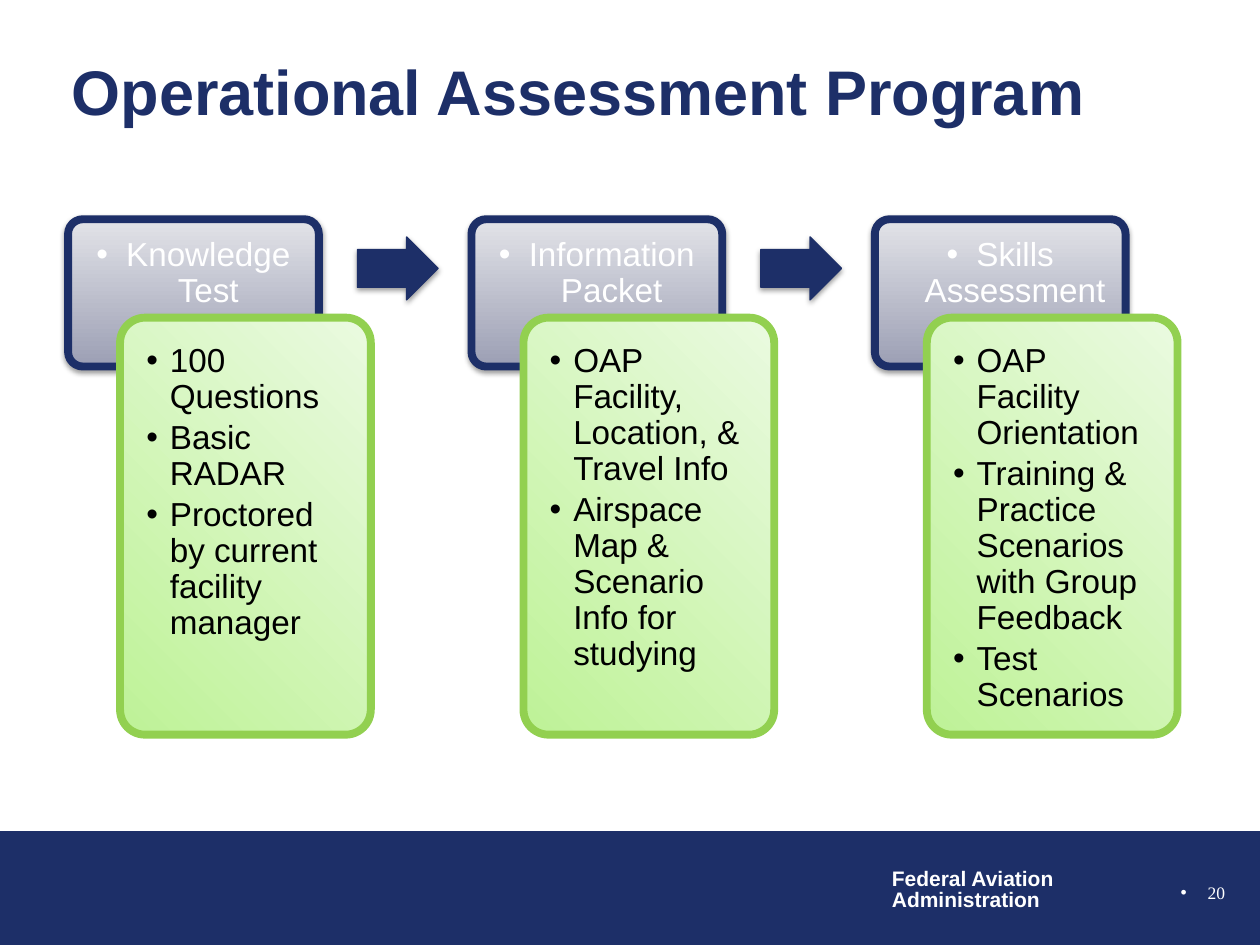
import pptx
import pptx.dml.color
import pptx.enum.shapes
import pptx.enum.text
import pptx.oxml
import pptx.oxml.ns
import pptx.util

Pt = pptx.util.Pt
RGBColor = pptx.dml.color.RGBColor
SHAPE = pptx.enum.shapes.MSO_SHAPE
ALIGN = pptx.enum.text.PP_ALIGN
AUTO_SIZE = pptx.enum.text.MSO_AUTO_SIZE
MIDDLE = pptx.enum.text.MSO_ANCHOR.MIDDLE

NAVY = RGBColor(0x1D, 0x2F, 0x68)
WHITE = RGBColor(0xFF, 0xFF, 0xFF)
BLACK = RGBColor(0x00, 0x00, 0x00)
GREEN = RGBColor(0x92, 0xD0, 0x50)
GREY_FILL = (RGBColor(0x9C, 0x9F, 0xB4), RGBColor(0xE2, 0xE3, 0xE8))
GREEN_FILL = (RGBColor(0xBE, 0xF2, 0x97), RGBColor(0xEA, 0xFA, 0xE0))

TITLE_FONT = {"name": "Arial", "size": Pt(36), "bold": True}
AGENCY_FONT = {"name": "Arial", "size": Pt(12), "bold": True}
NUMBER_FONT = {"name": "Times New Roman", "size": Pt(10)}
STEP_FONT = {"name": "Arial", "size": Pt(19)}

STEPS = [
    ("Knowledge Test",
     ["100 Questions", "Basic RADAR", "Proctored by current facility manager"]),
    ("Information Packet",
     ["OAP Facility, Location, & Travel Info",
      "Airspace Map & Scenario Info for studying"]),
    ("Skills Assessment",
     ["OAP Facility Orientation",
      "Training & Practice Scenarios with Group Feedback",
      "Test Scenarios"]),
]
STEP_PITCH = 230.5


def add_bullet(p, indent):
    """Give the paragraph a round bullet that hangs by the indent."""
    ppr = p._p.get_or_add_pPr()
    ppr.set("marL", str(Pt(indent)))
    ppr.set("indent", str(-Pt(indent)))
    ns = pptx.oxml.ns.nsdecls("a")
    ppr.append(pptx.oxml.parse_xml(f'<a:buFont {ns} typeface="Arial"/>'))
    ppr.append(pptx.oxml.parse_xml(f'<a:buChar {ns} char="•"/>'))


def fill_text(tf, lines, font, color, indent=0, **paragraph_format):
    for i, line in enumerate(lines):
        p = tf.paragraphs[0] if i == 0 else tf.add_paragraph()
        if indent:
            add_bullet(p, indent)
        for name, value in paragraph_format.items():
            setattr(p, name, value)
        r = p.add_run()
        r.text = line
        for name, value in font.items():
            setattr(r.font, name, value)
        r.font.color.rgb = color


def add_text(s, box, lines, font, color, margins=None, wrap=True, **options):
    tf = s.shapes.add_textbox(*map(Pt, box)).text_frame
    tf.word_wrap = wrap
    if margins:
        for side, value in zip(("left", "top", "right", "bottom"), margins):
            setattr(tf, f"margin_{side}", Pt(value))
    fill_text(tf, lines, font, color, **options)
    return tf


def add_panel(s, kind, box, fill, line, width, angle=0, adjustments=()):
    """Add a shape with a plain colour or a pair of gradient colours."""
    sp = s.shapes.add_shape(kind, *map(Pt, box))
    sp.shadow.inherit = False
    for i, value in enumerate(adjustments):
        sp.adjustments[i] = value
    if isinstance(fill, RGBColor):
        sp.fill.solid()
        sp.fill.fore_color.rgb = fill
    else:
        sp.fill.gradient()
        sp.fill.gradient_angle = angle
        for position, (stop, color) in enumerate(zip(sp.fill.gradient_stops, fill)):
            stop.position = position
            stop.color.rgb = color
    sp.line.color.rgb = line
    sp.line.width = Pt(width)
    return sp


def add_shadow(sp):
    effects = sp._element.spPr.find(pptx.oxml.ns.qn("a:effectLst"))
    effects.append(pptx.oxml.parse_xml(
        f'<a:outerShdw {pptx.oxml.ns.nsdecls("a")} blurRad="{Pt(3.1)}" '
        f'dist="{Pt(1.6)}" dir="5400000" rotWithShape="0">'
        '<a:srgbClr val="000000"><a:alpha val="38000"/></a:srgbClr>'
        '</a:outerShdw>'))


def place_title(s, box, text):
    title = s.shapes.title
    title.left, title.top, title.width, title.height = map(Pt, box)
    tf = title.text_frame
    tf.auto_size = AUTO_SIZE.NONE
    tf.vertical_anchor = MIDDLE
    fill_text(tf, [text], TITLE_FONT, NAVY, alignment=ALIGN.LEFT)


def add_footer(s, box, number):
    left, top, width, height = box
    add_panel(s, SHAPE.RECTANGLE, box, NAVY, NAVY, 0.75)
    tf = add_text(s, (left + 502.6, top + 18, 108, 31.7),
                  ["Federal Aviation", "Administration"], AGENCY_FONT, WHITE,
                  wrap=False, line_spacing=0.85)
    tf.auto_size = AUTO_SIZE.SHAPE_TO_FIT_TEXT
    add_text(s, (left + width - 162.7, top + 25.2, 149.8, 24.5), [number],
             NUMBER_FONT, WHITE, indent=15.5, alignment=ALIGN.RIGHT)


def add_step(s, box, heading, details):
    """Add a heading card with a detail card overlapping its lower right."""
    left, top, width, height = box
    card_width = width - 29.7
    detail_left, detail_top = left + 29.7, top + 56.2
    detail_height = height - 56.2

    head = add_panel(s, SHAPE.ROUNDED_RECTANGLE, (left, top, card_width, 84.2),
                     GREY_FILL, NAVY, 4.5, angle=90, adjustments=[0.1])
    add_shadow(head)
    add_text(s, (left, top, card_width, 56.2), [heading], STEP_FONT, WHITE,
             margins=(10.8, 10.8, 10.8, 5.8), indent=17,
             alignment=ALIGN.CENTER, line_spacing=0.9)

    add_panel(s, SHAPE.ROUNDED_RECTANGLE,
              (detail_left, detail_top, card_width, detail_height),
              GREEN_FILL, GREEN, 4.5, angle=45, adjustments=[0.1])
    add_text(s, (detail_left + 4.2, detail_top + 4.2,
                 card_width - 8.4, detail_height - 8.4),
             details, STEP_FONT, BLACK, margins=[10.8] * 4, indent=13.5,
             line_spacing=0.9, space_after=Pt(3))


def add_process(s, left, top, steps):
    for i, (heading, details) in enumerate(steps):
        x = left + i * STEP_PITCH
        add_step(s, (x, top, 173, 294.5), heading, details)
        if i < len(steps) - 1:
            arrow = add_panel(s, SHAPE.RIGHT_ARROW, (x + 165.4, top + 10.1, 46.1, 36),
                              NAVY, NAVY, 0.75, adjustments=[0.6, 0.5])
            add_shadow(arrow)


def main():
    prs = pptx.Presentation()
    prs.slide_width, prs.slide_height = Pt(720), Pt(540)
    s = prs.slides.add_slide(prs.slide_layouts[5])
    add_footer(s, (0, 475, 720, 64.5), "20")
    place_title(s, (33.8, 27.4, 667.4, 48.2), "Operational Assessment Program")
    add_process(s, 38.9, 125.3, STEPS)
    prs.save("out.pptx")


if __name__ == "__main__":
    main()
